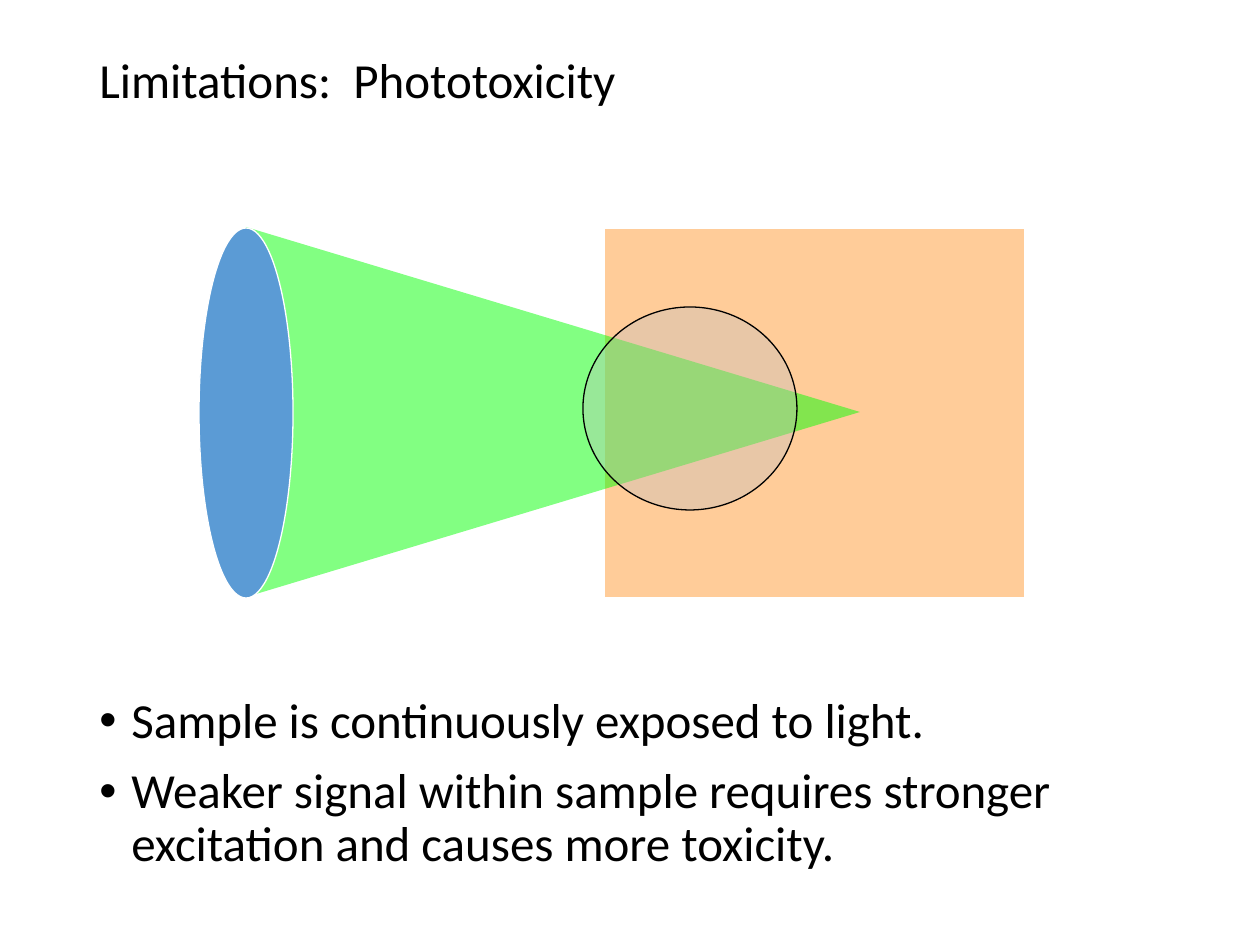
from lxml import etree
from pptx import Presentation
from pptx.dml.color import RGBColor
from pptx.enum.shapes import MSO_SHAPE
from pptx.enum.text import MSO_ANCHOR, PP_ALIGN
from pptx.oxml.ns import qn
from pptx.util import Emu, Pt

EMU_PER_PX = 914400 // 126
BLACK = RGBColor(0x00, 0x00, 0x00)
WHITE = RGBColor(0xFF, 0xFF, 0xFF)
SAMPLE_ORANGE = RGBColor(0xFF, 0xCC, 0x99)
LIGHT_GREEN = RGBColor(0x00, 0xFF, 0x00)
LENS_BLUE = RGBColor(0x5B, 0x9B, 0xD5)
CELL_GRAY = RGBColor(0xC0, 0xC0, 0xC0)


def px(length):
    return Emu(length * EMU_PER_PX)


class SlideBuilder:
    font_name = "Calibri"
    font_size = Pt(28)
    line_width = Pt(0.75)
    bullet_indent = px(32)

    def __init__(self, slide):
        self.slide = slide

    def shape(self, kind, left, top, width, height, fill, line=None,
              opacity=100, rotation=0):
        """Add a preset shape; opacity is a percentage."""
        shape = self.slide.shapes.add_shape(
            kind, px(left), px(top), px(width), px(height))
        shape.shadow.inherit = False
        shape.rotation = rotation
        shape.fill.solid()
        shape.fill.fore_color.rgb = fill
        if opacity < 100:
            color = shape.fill._xPr.find(qn("a:solidFill"))[0]
            etree.SubElement(color, qn("a:alpha"), val=str(opacity * 1000))
        if line is None:
            shape.line.fill.background()
        else:
            shape.line.color.rgb = line
            shape.line.width = self.line_width
        return shape

    def text(self, left, top, width, height, lines, bulleted=False):
        box = self.slide.shapes.add_textbox(
            px(left), px(top), px(width), px(height))
        frame = box.text_frame
        frame.word_wrap = True
        frame.vertical_anchor = MSO_ANCHOR.TOP
        frame.text = "\n".join(lines)
        for paragraph in frame.paragraphs:
            paragraph.alignment = PP_ALIGN.LEFT
            paragraph.line_spacing = 0.9
            paragraph.font.name = self.font_name
            paragraph.font.size = self.font_size
            paragraph.font.color.rgb = BLACK
            if bulleted:
                paragraph.space_before = Pt(10)
                self.add_bullet(paragraph)
        return box

    def add_bullet(self, paragraph):
        properties = paragraph._p.get_or_add_pPr()
        properties.set("marL", str(self.bullet_indent))
        properties.set("indent", str(-self.bullet_indent))
        font = etree.Element(qn("a:buFont"), typeface="Arial")
        bullet = etree.Element(qn("a:buChar"), char="•")
        default_run = properties.find(qn("a:defRPr"))
        default_run.addprevious(font)
        default_run.addprevious(bullet)


def main():
    presentation = Presentation()
    presentation.slide_width = px(1260)
    presentation.slide_height = px(945)
    blank_layout = presentation.slide_layouts[6]
    builder = SlideBuilder(presentation.slides.add_slide(blank_layout))

    # Sample block, light cone, then the lens and the cell in front
    builder.shape(MSO_SHAPE.RECTANGLE, 604, 228, 421, 370,
                  SAMPLE_ORANGE, WHITE)
    builder.shape(MSO_SHAPE.ISOSCELES_TRIANGLE, 368, 105, 370, 614,
                  LIGHT_GREEN, opacity=49, rotation=90)
    builder.text(87, 50, 1086, 183, ["Limitations:  Phototoxicity"])
    builder.text(87, 690, 1134, 208, [
        "Sample is continuously exposed to light.",
        "Weaker signal within sample requires stronger excitation "
        "and causes more toxicity.",
    ], bulleted=True)
    builder.shape(MSO_SHAPE.OVAL, 199, 228, 94, 370, LENS_BLUE, WHITE)
    builder.shape(MSO_SHAPE.OVAL, 583, 307, 214, 203, CELL_GRAY, BLACK,
                  opacity=36)

    presentation.save("out.pptx")


if __name__ == "__main__":
    main()
